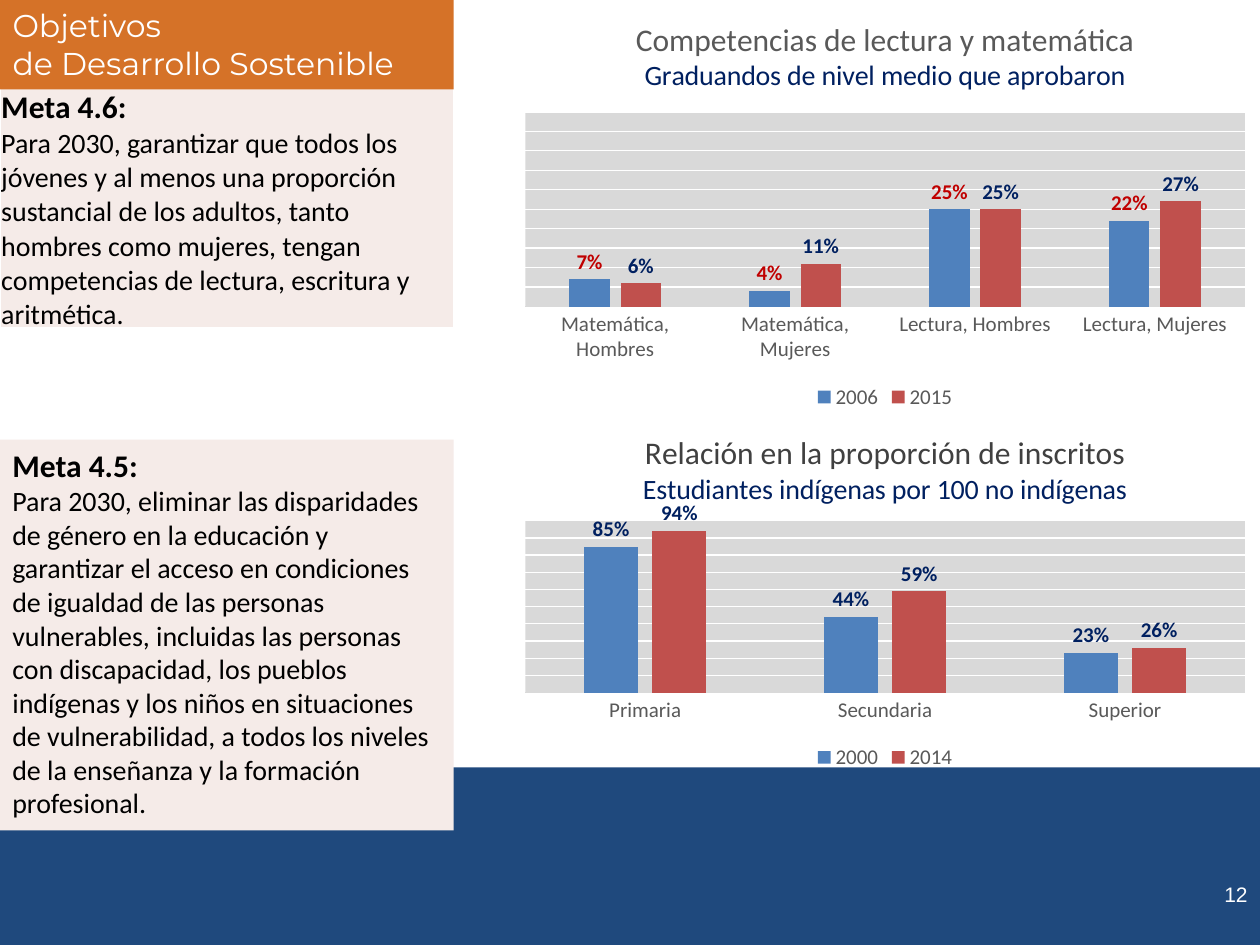
"""Build the slide on education targets 4.5 and 4.6 with their two charts."""
import lxml.etree
import pptx
import pptx.chart.data
import pptx.dml.color
import pptx.enum.chart
import pptx.enum.shapes
import pptx.enum.text
import pptx.oxml
import pptx.oxml.ns
import pptx.util

Inches = pptx.util.Inches
qn = pptx.oxml.ns.qn
COLORS = {
    "navy": "1F497D", "orange": "D57228", "blush": "F5EBE8", "white": "FFFFFF",
    "black": "000000", "gray": "595959", "charcoal": "404040", "silver": "D9D9D9",
    "blue": "4F81BD", "brick": "C0504D", "red": "C00000", "ink": "002060",
}


def paint(target, color):
    """Give a fill or line format one solid colour."""
    target.solid()
    target.fore_color.rgb = pptx.dml.color.RGBColor.from_string(COLORS[color])


def style(font, color, size, name="Calibri", bold=False):
    """Format a font."""
    for attribute, value in {"name": name, "size": pptx.util.Pt(size), "bold": bold}.items():
        setattr(font, attribute, value)
    font.color.rgb = pptx.dml.color.RGBColor.from_string(COLORS[color])


presentation = pptx.Presentation()
presentation.slide_width, presentation.slide_height = Inches(10), Inches(7.5)
slide = presentation.slides.add_slide(presentation.slide_layouts[5])
shapes = slide.shapes
rectangle = pptx.enum.shapes.MSO_SHAPE.RECTANGLE

footer_band = shapes.add_shape(rectangle, Inches(0), Inches(6.09), Inches(10), Inches(1.41))
page_number = shapes.add_textbox(Inches(8.95), Inches(6.9), Inches(1.05), Inches(0.4))
page_number.text_frame.vertical_anchor = pptx.enum.text.MSO_ANCHOR.MIDDLE
page_number.text_frame.word_wrap = True
number_line = page_number.text_frame.paragraphs[0]
number_line.text = "12"
number_line.alignment = pptx.enum.text.PP_ALIGN.RIGHT
style(number_line.font, "white", 12, "Arial")

target_table = shapes.add_table(1, 1, Inches(0), Inches(0.69), Inches(3.6), Inches(1.91)).table
target_46 = target_table.cell(0, 0)
target_46.vertical_anchor = pptx.enum.text.MSO_ANCHOR.MIDDLE
margins = {"margin_left": 0.01, "margin_right": 0.01, "margin_top": 0.01, "margin_bottom": 0}
for side, width in margins.items():
    setattr(target_46, side, Inches(width))
cell_properties = target_46._tc.get_or_add_tcPr()
for edge in ("lnL", "lnR", "lnT", "lnB"):
    border = lxml.etree.SubElement(cell_properties, qn(f"a:{edge}"), w="12700")
    border_fill = lxml.etree.SubElement(border, qn("a:solidFill"))
    lxml.etree.SubElement(border_fill, qn("a:srgbClr"), val=COLORS["white"])
paint(target_46.fill, "blush")

charts = [
    {
        "top": 0, "height": 3.29, "plot": (0.02, 0.27, 0.96, 0.47), "max": 0.5, "unit": 0.05,
        "title": [("Competencias de lectura y matemática", "gray", 18),
                  ("Graduandos de nivel medio que aprobaron", "ink", 16)],
        "categories": ["Matemática, Hombres", "Matemática, Mujeres",
                       "Lectura, Hombres", "Lectura, Mujeres"],
        "series": [("2006", (0.07, 0.04, 0.25, 0.22), "blue", "red"),
                   ("2015", (0.06, 0.11, 0.25, 0.27), "brick", "ink")],
    },
    {
        "top": 3.29, "height": 2.86, "plot": (0.02, 0.295, 0.96, 0.477), "max": 1, "unit": 0.1,
        "title": [("Relación en la proporción de inscritos", "charcoal", 18),
                  ("Estudiantes indígenas por 100 no indígenas", "ink", 16)],
        "categories": ["Primaria", "Secundaria", "Superior"],
        "series": [("2000", (0.85, 0.44, 0.23), "blue", "ink"),
                   ("2014", (0.94, 0.59, 0.26), "brick", "ink")],
    },
]
for content in charts:
    data = pptx.chart.data.CategoryChartData(number_format="0%")
    data.categories = content["categories"]
    for year, values, _, _ in content["series"]:
        data.add_series(year, values)
    chart = shapes.add_chart(
        pptx.enum.chart.XL_CHART_TYPE.COLUMN_CLUSTERED, Inches(4.05), Inches(content["top"]),
        Inches(5.95), Inches(content["height"]), data).chart
    style(chart.font, "black", 10)

    chart.has_title = True
    heading = chart.chart_title.text_frame
    for index, (text, color, size) in enumerate(content["title"]):
        line = heading.add_paragraph() if index else heading.paragraphs[0]
        run = line.add_run()
        run.text = text
        style(run.font, color, size)
    chart.chart_title.include_in_layout = False

    chart.has_legend = True
    chart.legend.position = pptx.enum.chart.XL_LEGEND_POSITION.BOTTOM
    chart.legend.include_in_layout = False
    style(chart.legend.font, "gray", 12)

    category_axis, value_axis = chart.category_axis, chart.value_axis
    category_axis.major_tick_mark = pptx.enum.chart.XL_TICK_MARK.NONE
    style(category_axis.tick_labels.font, "gray", 12)
    paint(category_axis.format.line.fill, "silver")
    axis_values = {"visible": False, "minimum_scale": 0, "maximum_scale": content["max"],
                   "major_unit": content["unit"], "has_major_gridlines": True}
    for attribute, value in axis_values.items():
        setattr(value_axis, attribute, value)
    paint(value_axis.major_gridlines.format.line.fill, "white")
    value_axis.major_gridlines.format.line.width = pptx.util.Pt(0.75)

    plot = chart.plots[0]
    plot.gap_width, plot.overlap, plot.vary_by_categories = 219, -27, False
    for series, (_, _, bar_color, label_color) in zip(plot.series, content["series"]):
        paint(series.format.fill, bar_color)
        labels = series.data_labels
        label_values = {"show_value": True, "number_format": "0%", "number_format_is_linked": False,
                        "position": pptx.enum.chart.XL_LABEL_POSITION.OUTSIDE_END}
        for attribute, value in label_values.items():
            setattr(labels, attribute, value)
        style(labels.font, label_color, 12, bold=True)

    plot_area = chart._chartSpace.chart.plotArea
    for automatic in plot_area.findall(qn("c:layout")):
        plot_area.remove(automatic)
    layout = lxml.etree.Element(qn("c:layout"))
    manual = lxml.etree.SubElement(layout, qn("c:manualLayout"))
    places = [("layoutTarget", "inner"), ("xMode", "edge"), ("yMode", "edge")]
    places += zip("xywh", content["plot"])
    for tag, value in places:
        lxml.etree.SubElement(manual, qn(f"c:{tag}"), val=str(value))
    plot_area.insert(0, layout)
    plot_properties = lxml.etree.SubElement(plot_area, qn("c:spPr"))
    plot_fill = lxml.etree.SubElement(plot_properties, qn("a:solidFill"))
    lxml.etree.SubElement(plot_fill, qn("a:srgbClr"), val=COLORS["silver"])

target_45 = shapes.add_shape(rectangle, Inches(0), Inches(3.49), Inches(3.6), Inches(3.1))
for panel, color in ((footer_band, "navy"), (target_45, "blush")):
    panel.shadow.inherit = False
    paint(panel.fill, color)
    panel.line.fill.background()

title = shapes.title
title_place = {"left": 0, "top": 0, "width": 3.6, "height": 0.71}
for attribute, value in title_place.items():
    setattr(title, attribute, Inches(value))
paint(title.fill, "orange")
shapes._spTree.append(title._element)

texts = [
    (target_46.text_frame, [
        ("Meta 4.6:", "black", 18, "Calibri", True),
        ("Para 2030, garantizar que todos los jóvenes y al menos una proporción sustancial de los "
         "adultos, tanto hombres como mujeres, tengan competencias de lectura, escritura y "
         "aritmética.", "black", 16, "Calibri", False)]),
    (target_45.text_frame, [
        ("Meta 4.5:", "black", 18, "Calibri", True),
        ("Para 2030, eliminar las disparidades de género en la educación y garantizar el acceso en "
         "condiciones de igualdad de las personas vulnerables, incluidas las personas con "
         "discapacidad, los pueblos indígenas y los niños en situaciones de vulnerabilidad, a todos "
         "los niveles de la enseñanza y la formación profesional.", "black", 16, "Calibri", False)]),
    (title.text_frame, [
        ("Objetivos", "white", 18, "Montserrat", False),
        ("de Desarrollo Sostenible", "white", 18, "Montserrat", False)]),
]
for frame, lines in texts:
    for index, (text, *look) in enumerate(lines):
        line = frame.add_paragraph() if index else frame.paragraphs[0]
        line.text = text
        line.alignment = pptx.enum.text.PP_ALIGN.LEFT
        style(line.runs[0].font, *look)
for frame in (target_45.text_frame, title.text_frame):
    frame.word_wrap = True
    frame.auto_size = pptx.enum.text.MSO_AUTO_SIZE.NONE
    frame.vertical_anchor = pptx.enum.text.MSO_ANCHOR.TOP

presentation.save("out.pptx")
